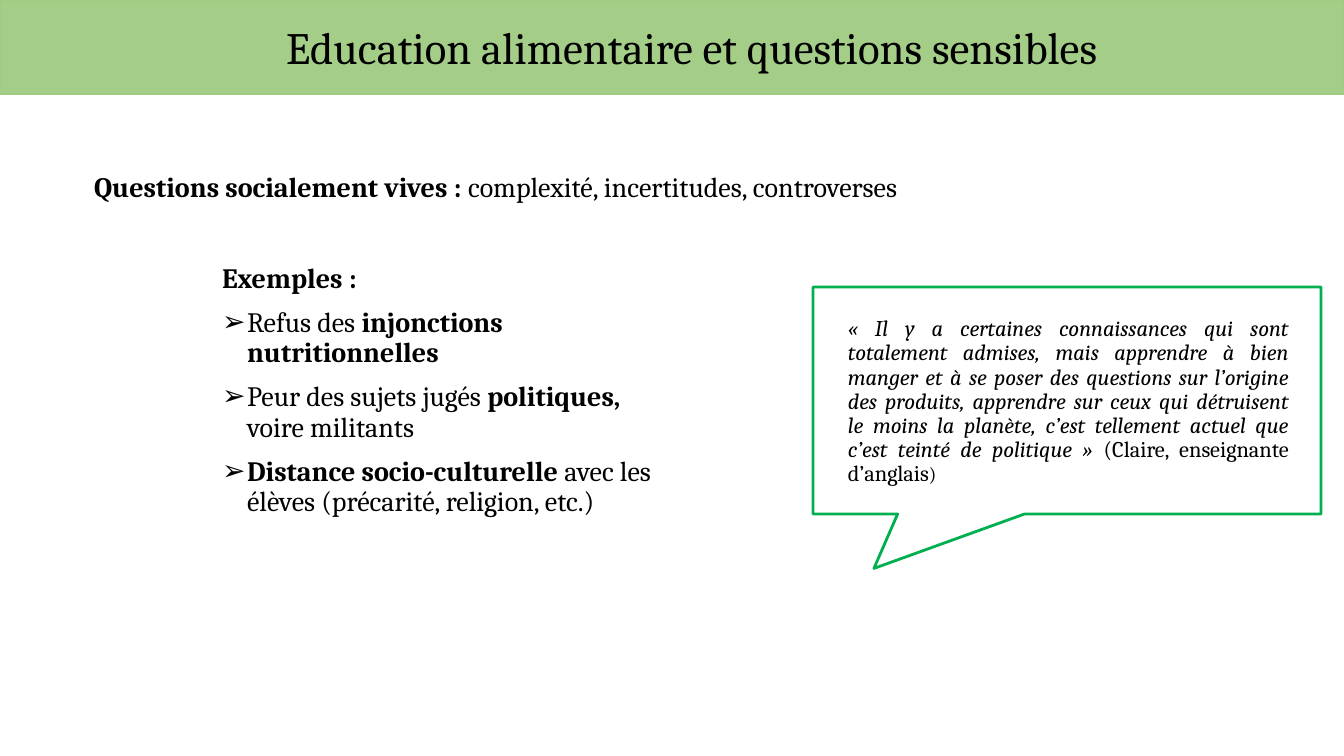
import pptx
import pptx.dml.color
import pptx.enum.shapes
import pptx.enum.text
import pptx.oxml
import pptx.oxml.ns
import pptx.util

PX = 914400 / 100.8
ALIGN = pptx.enum.text.PP_ALIGN
ANCHOR = pptx.enum.text.MSO_ANCHOR
SHAPE = pptx.enum.shapes.MSO_SHAPE
BLACK, BAND_GREEN, CALLOUT_GREEN = "000000", "A0CC82", "00B050"
INDENT = 25

BOLD = {"bold": True}
PLAIN = {"bold": False}
ITALIC = {"italic": True}

EXAMPLES = [
    [("Refus des ", PLAIN), ("injonctions nutritionnelles", BOLD)],
    [("Peur des sujets jugés ", PLAIN), ("politiques, ", BOLD), ("voire militants", PLAIN)],
    [("Distance socio-culturelle ", BOLD), ("avec les élèves (précarité, religion, etc.)", PLAIN)],
]
QUOTE = [
    ("« Il y a certaines connaissances qui sont totalement admises, mais apprendre à bien manger "
     "et à se poser des questions sur l’origine des produits, apprendre sur ceux qui détruisent "
     "le moins la planète, c’est tellement actuel que c’est teinté de politique » ", ITALIC),
    ("(Claire, enseignante d’anglais", {}),
    (")", {"size": pptx.util.Pt(14)}),
]


def emu(px):
    """Turn a length in px into EMU."""
    return pptx.util.Emu(round(px * PX))


def color(value):
    """Turn a hex string into an RGB colour."""
    return pptx.dml.color.RGBColor.from_string(value)


def apply(target, values):
    """Set each attribute of target from a dict."""
    for name, value in values.items():
        setattr(target, name, value)


def place(sp, x, y, w, h):
    """Move and size a shape in px."""
    apply(sp, {"left": emu(x), "top": emu(y), "width": emu(w), "height": emu(h)})


def frame(sp, anchor):
    """Prepare the text frame of a shape."""
    tf = sp.text_frame
    apply(tf, {"word_wrap": True, "auto_size": pptx.enum.text.MSO_AUTO_SIZE.NONE,
               "vertical_anchor": anchor})
    return tf


def add_xml(parent, tag, **attrs):
    """Append a drawing element with attributes."""
    child = pptx.oxml.parse_xml(f"<a:{tag} {pptx.oxml.ns.nsdecls('a')}/>")
    for name, value in attrs.items():
        child.set(name, value)
    parent.append(child)
    return child


def write(p, runs, size, align=ALIGN.LEFT, spacing=0.9, before=0, left=0, bullet=None):
    """Fill a paragraph with formatted runs."""
    pPr = p._p.get_or_add_pPr()
    pPr.set("marL", str(emu(left)))
    pPr.set("indent", str(-emu(left) if bullet else 0))
    if bullet:
        add_xml(add_xml(pPr, "buClr"), "srgbClr", val=BLACK)
        add_xml(pPr, "buChar", char=bullet)
    else:
        add_xml(pPr, "buNone")
    apply(p, {"alignment": align, "line_spacing": spacing,
              "space_before": pptx.util.Pt(before), "space_after": pptx.util.Pt(0)})
    for text, style in runs:
        r = p.add_run()
        r.text = text
        apply(r.font, {"name": "Cambria", "size": pptx.util.Pt(size), **style})
        r.font.color.rgb = color(BLACK)


def add_outlined(s, kind, box, line):
    """Add a preset shape with a 2 pt outline and no shadow."""
    sp = s.shapes.add_shape(kind, *map(emu, box))
    sp.shadow.inherit = False
    sp.line.color.rgb = color(line)
    sp.line.width = pptx.util.Pt(2)
    return sp


def add_band(s):
    """Add the green heading band."""
    sp = add_outlined(s, SHAPE.RECTANGLE, (0, 0, 1344, 94), BAND_GREEN)
    sp.fill.solid()
    sp.fill.fore_color.rgb = color(BAND_GREEN)
    fill = sp._element.spPr.find(pptx.oxml.ns.qn("a:solidFill"))
    add_xml(fill[0], "alpha", val="95000")
    write(frame(sp, ANCHOR.MIDDLE).paragraphs[0],
          [("Education alimentaire et questions sensibles ", {})],
          32, ALIGN.CENTER, spacing=1.0, left=2 * INDENT)


def add_examples(sp):
    """Write the heading and the bulleted examples."""
    place(sp, 212, 259, 461, 227)
    tf = frame(sp, ANCHOR.TOP)
    write(tf.paragraphs[0], [("Exemples :", BOLD)], 20)
    for runs in EXAMPLES:
        write(tf.add_paragraph(), runs, 20, before=10, left=INDENT, bullet="➢")


def add_quote(s):
    """Add the quotation and its callout outline."""
    sp = s.shapes.add_textbox(*map(emu, (838, 281, 461, 242)))
    write(frame(sp, ANCHOR.MIDDLE).paragraphs[0], QUOTE, 16, ALIGN.JUSTIFY)
    callout = add_outlined(s, SHAPE.RECTANGULAR_CALLOUT, (813, 287, 508, 227), CALLOUT_GREEN)
    callout.fill.background()
    callout.adjustments[0] = -0.38
    callout.adjustments[1] = 0.74


def main():
    """Build and save the slide."""
    prs = pptx.Presentation()
    apply(prs, {"slide_width": emu(1344), "slide_height": emu(756)})
    s = prs.slides.add_slide(prs.slide_layouts[1])
    title = s.shapes.title
    place(title, 84, 115, 1159, 146)
    write(frame(title, ANCHOR.MIDDLE).paragraphs[0],
          [("Questions socialement vives : ", BOLD),
           ("complexité, incertitudes, controverses", PLAIN)], 20)
    add_examples(s.placeholders[1])
    add_band(s)
    add_quote(s)
    prs.save("out.pptx")


if __name__ == "__main__":
    main()
